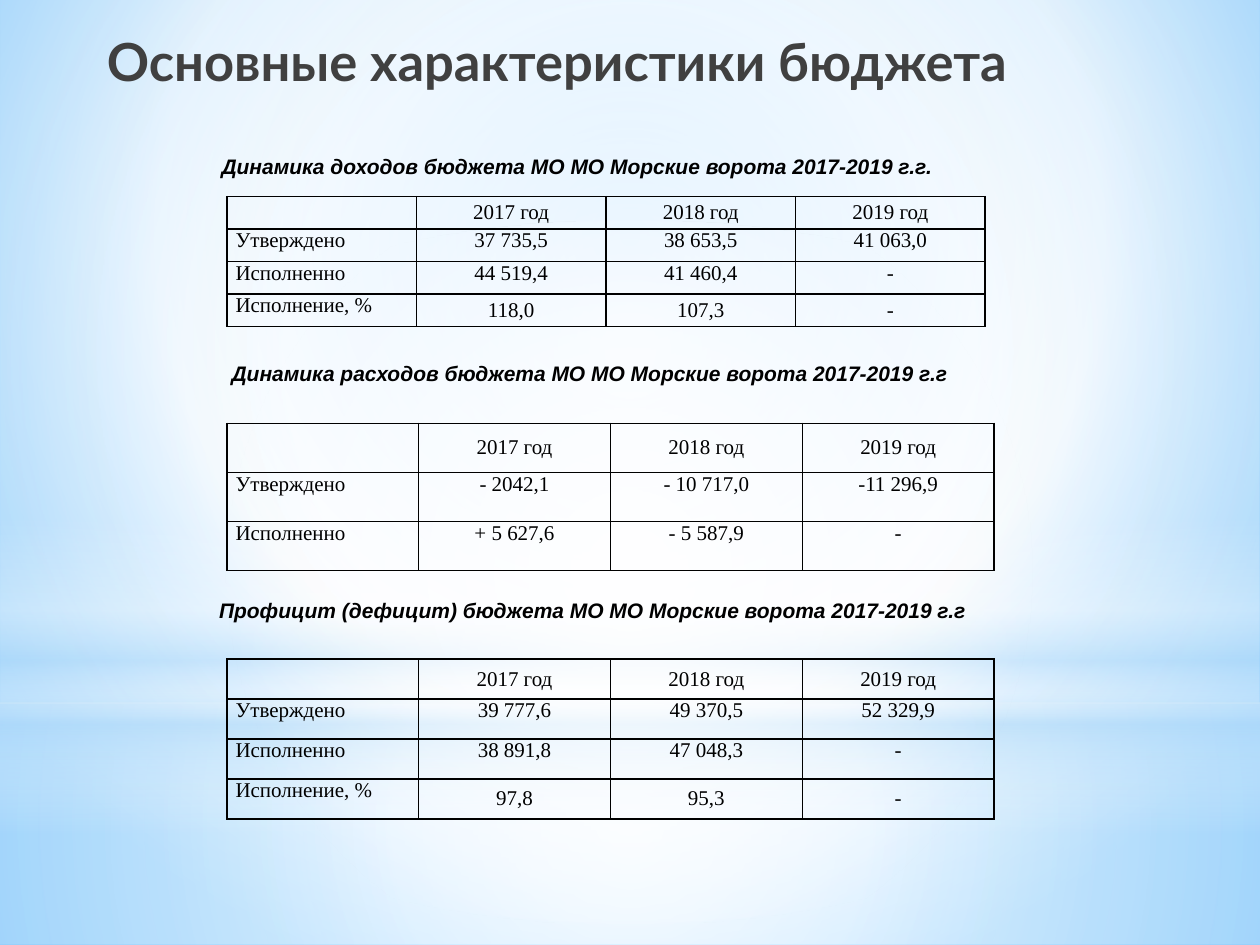
from lxml import etree
from pptx import Presentation
from pptx.dml.color import RGBColor
from pptx.enum.shapes import MSO_SHAPE
from pptx.enum.text import MSO_ANCHOR, PP_ALIGN
from pptx.oxml.ns import qn
from pptx.util import Inches, Pt

RECT, OVAL = MSO_SHAPE.RECTANGLE, MSO_SHAPE.OVAL
TOP, MIDDLE = MSO_ANCHOR.TOP, MSO_ANCHOR.MIDDLE
LEFT, CENTER = PP_ALIGN.LEFT, PP_ALIGN.CENTER

THEME = {
    "title": {"font": "Lato", "size": 30, "color": "404040", "bold": True},
    "caption": {"font": "Arial", "size": 12, "color": "000000", "bold": True, "italic": True},
    "cell": {"font": "Times New Roman", "size": 12, "color": "000000"},
    "border": ("000000", 1),
    "white": "FFFFFF", "pale": "B4DCFA", "sky": "9ED5FF", "blue": "5BB9FF",
}
WHITE, PALE = THEME["white"], THEME["pale"]

# Content
TITLE = "Основные характеристики бюджета"
HEADER = ["", "2017 год", "2018 год", "2019 год"]
SECTIONS = [
    {"caption": "Динамика доходов бюджета МО МО Морские ворота 2017-2019 г.г.",
     "caption_box": (1.17, 1.17, 7.03, 0.3), "indent": 0.49,
     "table_box": (1.8, 1.56, 6.02, 1.03),
     "rows": [["Утверждено", "37 735,5", "38 653,5", "41 063,0"],
              ["Исполненно", "44 519,4", "41 460,4", "-"],
              ["Исполнение, %", "118,0", "107,3", "-"]]},
    {"caption": "Динамика расходов бюджета МО МО Морские ворота 2017-2019 г.г",
     "caption_box": (1.25, 2.81, 6.8, 0.3), "indent": 0.49,
     "table_box": (1.8, 3.36, 6.09, 1.17),
     "rows": [["Утверждено", "- 2042,1", "- 10 717,0", "-11 296,9"],
              ["Исполненно", "+ 5 627,6", "- 5 587,9", "-"]]},
    {"caption": "Профицит (дефицит) бюджета МО МО Морские ворота 2017-2019 г.г",
     "caption_box": (1.64, 4.69, 6.64, 0.3), "indent": 0,
     "table_box": (1.8, 5.23, 6.09, 1.27),
     "rows": [["Утверждено", "39 777,6", "49 370,5", "52 329,9"],
              ["Исполненно", "38 891,8", "47 048,3", "-"],
              ["Исполнение, %", "97,8", "95,3", "-"]]},
]

# Backdrop: stops are (position %, colour, opacity %); focus is left, top, right, bottom %
CENTRE = (50, 50, 50, 50)
SKY_STOPS = [(0, THEME["sky"], 100), (60, WHITE, 100), (100, THEME["blue"], 100)]
SKY_FOCUS = (20, 10, 20, 60)
BACKDROP = [
    (RECT, (0, 5.58, 10, 1.92), [(0, WHITE, 91), (37, WHITE, 76), (100, PALE, 79)], CENTRE),
    (RECT, (0, 0, 10, 5.58), [(0, WHITE, 89), (48, WHITE, 62), (100, PALE, 79)], CENTRE),
    (RECT, (0, 4.12, 10, 2.5), [(0, WHITE, 0), (29, WHITE, 30), (45, PALE, 40),
                                (55, WHITE, 26), (65, PALE, 60), (100, WHITE, 0)], None),
    (OVAL, (0, 1.75, 10, 5.58), [(0, WHITE, 100), (56, WHITE, 0)], CENTRE),
]


def add_element(parent, tag, **attributes):
    return etree.SubElement(parent, qn(tag), {k: str(v) for k, v in attributes.items()})


def set_gradient(fill, owner, stops, focus):
    """Circular gradient towards focus, or top to bottom when focus is None."""
    fill.gradient()
    gradient = next(owner.iter(qn("a:gradFill")))
    for child in list(gradient):
        gradient.remove(child)
    stop_list = add_element(gradient, "a:gsLst")
    for position, color, opacity in stops:
        stop = add_element(stop_list, "a:gs", pos=position * 1000)
        add_element(add_element(stop, "a:srgbClr", val=color), "a:alpha", val=opacity * 1000)
    if focus:
        circle = add_element(gradient, "a:path", path="circle")
        add_element(circle, "a:fillToRect",
                    **{side: value * 1000 for side, value in zip("ltrb", focus)})
    else:
        add_element(gradient, "a:lin", ang=90 * 60000, scaled=0)


def add_run(paragraph, text, style):
    run = paragraph.add_run()
    run.text = text
    run.font.name = style["font"]
    run.font.size = Pt(style["size"])
    run.font.bold = style.get("bold", False)
    run.font.italic = style.get("italic", False)
    run.font.color.rgb = RGBColor.from_string(style["color"])


def add_text(slide, box, text, style, indent=0):
    frame = slide.shapes.add_textbox(*map(Inches, box)).text_frame
    frame.word_wrap = True
    paragraph = frame.paragraphs[0]
    if indent:
        paragraph._p.get_or_add_pPr().set("indent", str(Inches(indent)))
    add_run(paragraph, text, style)


def set_borders(cell):
    color, width = THEME["border"]
    properties = cell._tc.get_or_add_tcPr()
    for side in ("a:lnL", "a:lnR", "a:lnT", "a:lnB"):
        line = add_element(properties, side, w=Pt(width))
        add_element(add_element(line, "a:solidFill"), "a:srgbClr", val=color)


def fill_cell(cell, text, align, anchor):
    set_borders(cell)
    cell.fill.background()
    cell.margin_left = cell.margin_right = Inches(0.07)
    cell.margin_top = cell.margin_bottom = 0
    cell.vertical_anchor = anchor
    paragraph = cell.text_frame.paragraphs[0]
    paragraph.alignment = align
    if text:
        add_run(paragraph, text, THEME["cell"])
    else:
        add_element(paragraph._p, "a:endParaRPr", sz=THEME["cell"]["size"] * 100)


def add_budget_table(slide, box, body):
    rows = [HEADER] + body
    left, top, width, height = map(Inches, box)
    table = slide.shapes.add_table(len(rows), len(HEADER), left, top, width, height).table
    table.first_row = table.horz_banding = False
    for column in table.columns:
        column.width = width // len(HEADER)
    for r, values in enumerate(rows):
        table.rows[r].height = height // len(rows)
        percent_row = values[0].endswith("%")
        for c, value in enumerate(values):
            centred = r == 0 or (percent_row and c > 0)
            fill_cell(table.cell(r, c), value, CENTER if c else LEFT, MIDDLE if centred else TOP)


def main():
    deck = Presentation()
    deck.slide_width, deck.slide_height = Inches(10), Inches(7.5)
    slide = deck.slides.add_slide(deck.slide_layouts[6])

    # Sky background and soft light layers
    set_gradient(slide.background.fill, slide._element, SKY_STOPS, SKY_FOCUS)
    for preset, box, stops, focus in BACKDROP:
        layer = slide.shapes.add_shape(preset, *map(Inches, box))
        layer.shadow.inherit = False
        layer.line.fill.background()
        set_gradient(layer.fill, layer._element, stops, focus)

    # Title, then each captioned table
    add_text(slide, (0.75, 0.18, 8.65, 0.7), TITLE, THEME["title"])
    for section in SECTIONS:
        add_budget_table(slide, section["table_box"], section["rows"])
        add_text(slide, section["caption_box"], section["caption"],
                 THEME["caption"], section["indent"])

    deck.save("out.pptx")


if __name__ == "__main__":
    main()
